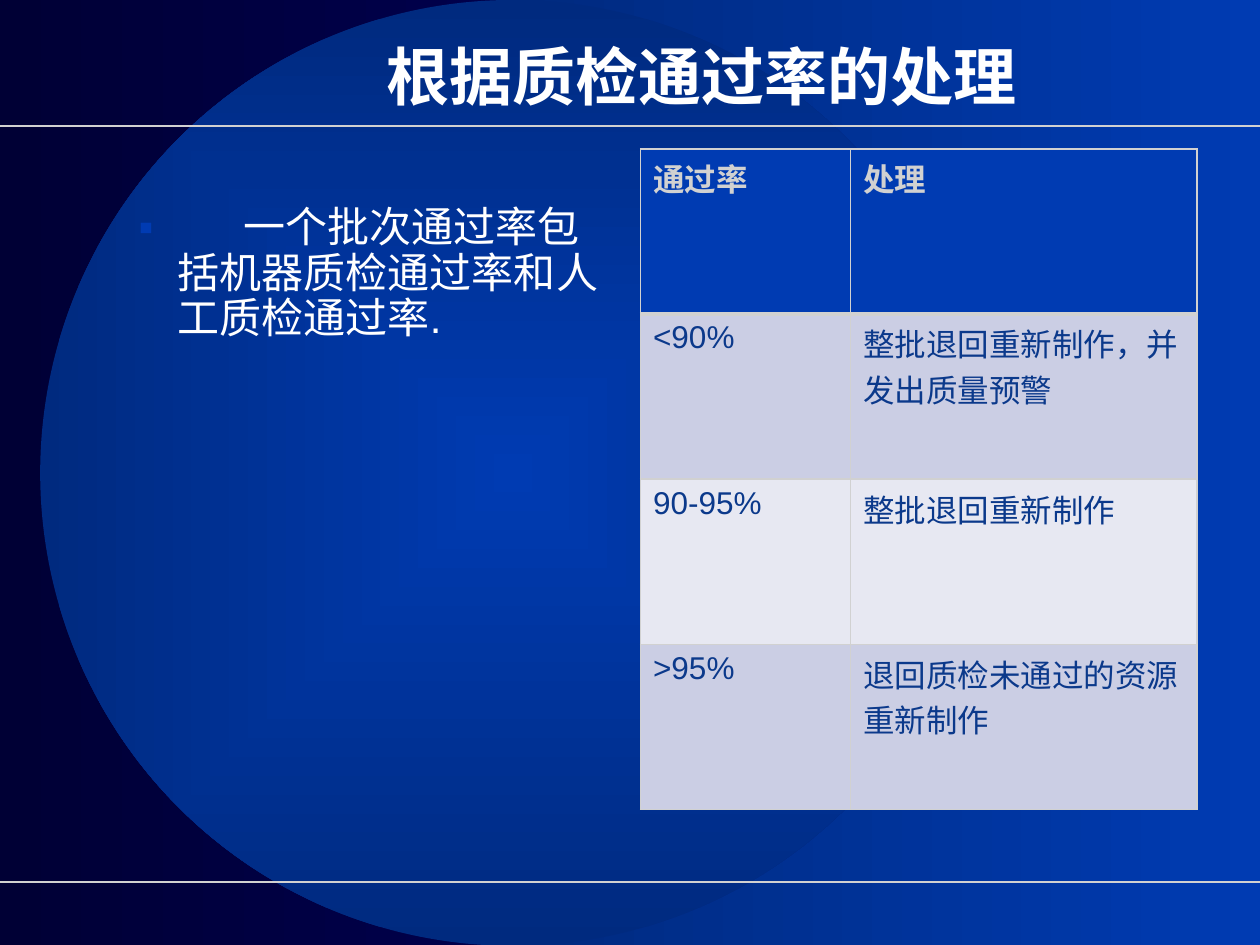
"""Build the slide on handling batches by quality-check pass rate."""
import pptx
import pptx.util
import pptx.dml.color
import pptx.enum.shapes
import pptx.enum.text
import pptx.oxml
import pptx.oxml.ns
import lxml.etree

Pt = pptx.util.Pt
RGB = pptx.dml.color.RGBColor.from_string
SHAPE = pptx.enum.shapes.MSO_SHAPE
TEXT = pptx.enum.text
qn = pptx.oxml.ns.qn
NS = pptx.oxml.ns.nsdecls("a")

THEME = {
    "font": "Arial",
    "night": "000035", "indigo": "000072",
    "navy": "002A7F", "blue": "003BB2",
    "rule": "D1D1D1", "white": "FFFFFF", "ink": "0B398B",
    "bands": ["003BB2", "CBCEE4", "E7E8F2", "CBCEE4"],
    "title": 36, "body": 24, "cell": 18,
}


def set_gradient(fill, start, end):
    fill.gradient()
    fill.gradient_angle = 0
    for stop, color in zip(fill.gradient_stops, (start, end)):
        stop.color.rgb = RGB(THEME[color])


def set_font(p, size, color, bold):
    fmt = {"name": THEME["font"], "size": Pt(THEME[size]), "bold": bold}
    for r in p.runs:
        for key, value in fmt.items():
            setattr(r.font, key, value)
        r.font.color.rgb = RGB(THEME[color])


prs = pptx.Presentation()
prs.slide_width, prs.slide_height = Pt(720), Pt(540)
s = prs.slides.add_slide(prs.slide_layouts[1])
set_gradient(s.background.fill, "night", "indigo")
title, body = s.placeholders

panels = [
    (SHAPE.RECTANGLE, (294, 0, 426, 540), "navy", "blue"),
    (SHAPE.OVAL, (23, 0, 540, 540.5), "blue", "navy"),
]
for kind, box, start, end in panels:
    sp = s.shapes.add_shape(kind, *map(Pt, box))
    sp.shadow.inherit = False
    sp.line.fill.background()
    set_gradient(sp.fill, start, end)
    if kind == SHAPE.OVAL:
        lin = sp._element.spPr.find(".//" + qn("a:lin"))
        lin.getparent().replace(lin, pptx.oxml.parse_xml(
            f'<a:path {NS} path="shape">'
            '<a:fillToRect l="50000" t="50000" r="50000" b="50000"/></a:path>'))

for y in (72, 504):
    rule = s.shapes.add_connector(
        pptx.enum.shapes.MSO_CONNECTOR.STRAIGHT, 0, Pt(y), Pt(720), Pt(y))
    rule.line.color.rgb = RGB(THEME["rule"])
    rule.line.width = Pt(1)
    lxml.etree.SubElement(rule._element.spPr, qn("a:effectLst"))

holders = [
    (title, (24, 10, 564, 66), "根据质检通过率的处理", "title", True,
     {"vertical_anchor": TEXT.MSO_ANCHOR.MIDDLE},
     {"alignment": TEXT.PP_ALIGN.RIGHT}),
    (body, (36, 85, 318, 413), "\t一个批次通过率包括机器质检通过率和人工质检通过率.", "body", False,
     {"vertical_anchor": TEXT.MSO_ANCHOR.TOP, "margin_top": Pt(33)},
     {"line_spacing": 0.9, "space_before": Pt(0)}),
]
for sp, box, text, size, bold, frame_format, para_format in holders:
    for key, value in zip(("left", "top", "width", "height"), box):
        setattr(sp, key, Pt(value))
    tf = sp.text_frame
    tf.text = text
    tf.word_wrap = True
    tf.auto_size = TEXT.MSO_AUTO_SIZE.NONE
    p = tf.paragraphs[0]
    for target, fmt in ((tf, frame_format), (p, para_format)):
        for key, value in fmt.items():
            setattr(target, key, value)
    set_font(p, size, "white", bold)
    s.shapes._spTree.append(sp._element)

pPr = body.text_frame.paragraphs[0]._p.get_or_add_pPr()
pPr.set("marL", str(Pt(58.5)))
pPr.set("indent", str(-Pt(22.5)))
for xml in (
    f'<a:buClr {NS}><a:srgbClr val="{THEME["blue"]}"/></a:buClr>',
    f'<a:buFont {NS} typeface="{THEME["font"]}"/>',
    f'<a:buChar {NS} char="▪"/>',
    f'<a:tabLst {NS}><a:tab pos="{Pt(96)}" algn="l"/></a:tabLst>',
):
    pPr.append(pptx.oxml.parse_xml(xml))

rows = [
    ("通过率", "处理"),
    ("<90%", "整批退回重新制作，并发出质量预警"),
    ("90-95%", "整批退回重新制作"),
    (">95%", "退回质检未通过的资源重新制作"),
]
table = s.shapes.add_table(4, 2, Pt(366), Pt(85), Pt(318), Pt(377.6)).table
for column, width in zip(table.columns, (120, 198)):
    column.width = Pt(width)
for i, (row, texts) in enumerate(zip(table.rows, rows)):
    row.height = Pt(94.4)
    for cell, text in zip(row.cells, texts):
        cell.text = text
        cell.fill.solid()
        cell.fill.fore_color.rgb = RGB(THEME["bands"][i])
        set_font(cell.text_frame.paragraphs[0], "cell",
                 "ink" if i else "rule", i == 0)
        tcPr = cell._tc.get_or_add_tcPr()
        for n, side in enumerate("LRTB"):
            heavy = (i, side) in ((0, "B"), (1, "T"))
            tcPr.insert(n, pptx.oxml.parse_xml(
                f'<a:ln{side} {NS} w="{Pt(3 if heavy else 1)}"><a:solidFill>'
                f'<a:srgbClr val="{THEME["rule"]}"/></a:solidFill></a:ln{side}>'))

prs.save("out.pptx")
